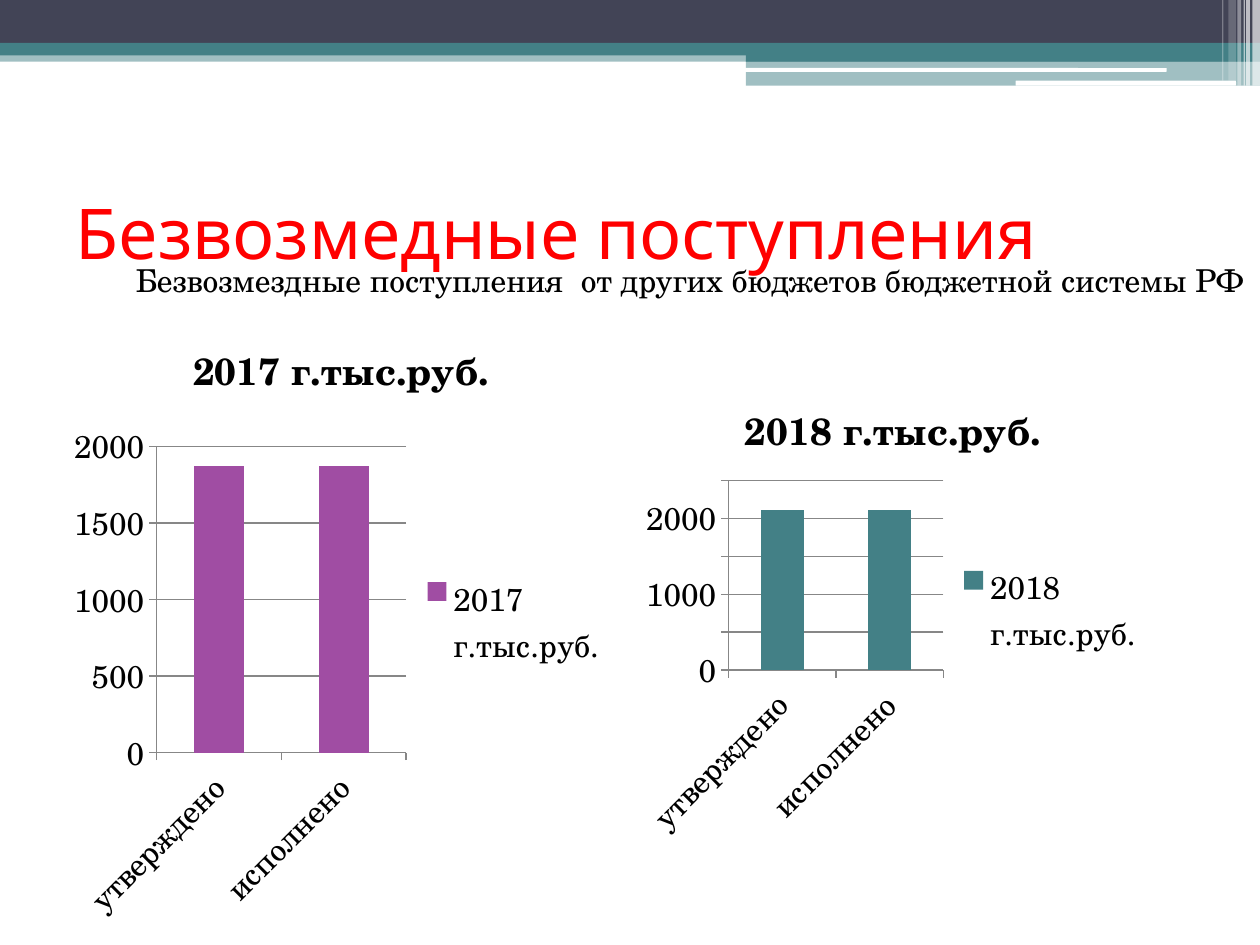
from lxml.etree import SubElement
from pptx import Presentation
from pptx.chart.data import CategoryChartData
from pptx.dml.color import RGBColor
from pptx.enum.chart import XL_CHART_TYPE, XL_LEGEND_POSITION, XL_TICK_MARK
from pptx.enum.shapes import MSO_SHAPE
from pptx.enum.text import MSO_ANCHOR, PP_ALIGN
from pptx.oxml.ns import qn
from pptx.util import Inches, Pt

COLORS = {
    "navy": "424456",
    "teal": "438086",
    "purple": "A04DA3",
    "white": "FFFFFF",
    "black": "000000",
    "red": "FF0000",
    "grid": "878787",
}
TITLE_FONT = "Karla"
BODY_FONT = "TeX Gyre Schola"
CATEGORIES = ["утверждено", "исполнено"]


class SlideBuilder:
    def __init__(self, slide):
        self.slide = slide

    def color(self, name):
        return RGBColor.from_string(COLORS[name])

    def style_font(self, font, size, color="black", name=BODY_FONT, bold=False):
        font.size = Pt(size)
        font.name = name
        font.bold = bold
        font.color.rgb = self.color(color)

    def bar(self, box, color, opacity=100, kind=MSO_SHAPE.RECTANGLE):
        shape = self.slide.shapes.add_shape(kind, *map(Inches, box))
        shape.shadow.inherit = False
        shape.line.fill.background()
        shape.fill.solid()
        shape.fill.fore_color.rgb = self.color(color)
        if opacity < 100:
            color_element = shape.fill._xPr.find(qn("a:solidFill"))[0]
            SubElement(color_element, qn("a:alpha"), val=str(opacity * 1000))

    def title(self, box, text):
        shape = self.slide.shapes.title
        shape.left, shape.top, shape.width, shape.height = map(Inches, box)
        shape.text_frame.text = text
        shape.text_frame.vertical_anchor = MSO_ANCHOR.MIDDLE
        paragraph = shape.text_frame.paragraphs[0]
        paragraph.alignment = PP_ALIGN.LEFT
        self.style_font(paragraph.font, 40, "red", TITLE_FONT)

    def text(self, box, text):
        shape = self.slide.shapes.add_textbox(*map(Inches, box))
        shape.text_frame.word_wrap = True
        paragraph = shape.text_frame.paragraphs[0]
        paragraph.text = text
        self.style_font(paragraph.font, 18)

    def chart(self, box, kind, name, values, color, maximum):
        data = CategoryChartData()
        data.categories = CATEGORIES
        data.add_series(name, values)
        chart = self.slide.shapes.add_chart(kind, *map(Inches, box), data).chart
        self.style_font(chart.font, 18)
        chart.has_title = True
        chart.chart_title.include_in_layout = False
        chart.chart_title.text_frame.text = name
        title = chart.chart_title.text_frame.paragraphs[0]
        self.style_font(title.font, 21.6, bold=True)
        chart.has_legend = True
        chart.legend.position = XL_LEGEND_POSITION.RIGHT
        chart.legend.include_in_layout = False

        value_axis = chart.value_axis
        value_axis.minimum_scale = 0
        value_axis.maximum_scale = maximum
        value_axis.major_unit = 500
        value_axis.has_major_gridlines = True
        for axis in (value_axis, chart.category_axis):
            axis.major_tick_mark = XL_TICK_MARK.OUTSIDE
            axis.format.line.color.rgb = self.color("grid")
        value_axis.major_gridlines.format.line.color.rgb = self.color("grid")

        plot = chart.plots[0]
        plot.vary_by_categories = False
        plot.gap_width = 150
        if kind == XL_CHART_TYPE.COLUMN_STACKED:
            plot.overlap = 100
        fill = plot.series[0].format.fill
        fill.solid()
        fill.fore_color.rgb = self.color(color)


def main():
    presentation = Presentation()
    presentation.slide_width = Inches(10)
    presentation.slide_height = Inches(7.5)
    slide = presentation.slides.add_slide(presentation.slide_layouts[5])
    builder = SlideBuilder(slide)

    builder.bar((0, 0.4, 10, 0.09), "teal", 50)
    builder.bar((0, 0, 10, 0.34), "navy")
    builder.bar((0, 0.34, 10, 0.1), "teal")
    builder.bar((5.92, 0.39, 4.08, 0.1), "teal")
    builder.bar((5.92, 0.48, 4.08, 0.2), "teal", 50)
    for box in ((5.91, 0.54, 3.35, 0.03), (8.06, 0.64, 1.75, 0.04)):
        builder.bar(box, "white", kind=MSO_SHAPE.ROUNDED_RECTANGLE)
    for left, width, height, opacity in (
        (9.94, 0.06, 0.68, 65),
        (9.89, 0.03, 0.68, 65),
        (9.87, 0.01, 0.68, 60),
        (9.82, 0.03, 0.68, 40),
        (9.75, 0.06, 0.64, 20),
        (9.7, 0.01, 0.64, 30),
    ):
        builder.bar((left, 0, width, height), "white", opacity)

    builder.title((0.5, 1.25, 9, 1.17), "Безвозмедные поступления")
    builder.chart((0.5, 2.46, 4.42, 4.95), XL_CHART_TYPE.COLUMN_CLUSTERED,
                  "2017 г.тыс.руб.", (1870, 1870), "purple", 2000)
    builder.chart((5, 2.96, 4.18, 3.77), XL_CHART_TYPE.COLUMN_STACKED,
                  "2018 г.тыс.руб.", (2110, 2110), "teal", 2500)
    builder.text((0.98, 2.02, 9.26, 0.4),
                 "Безвозмездные поступления  от других бюджетов бюджетной системы РФ")
    presentation.save("out.pptx")


if __name__ == "__main__":
    main()
